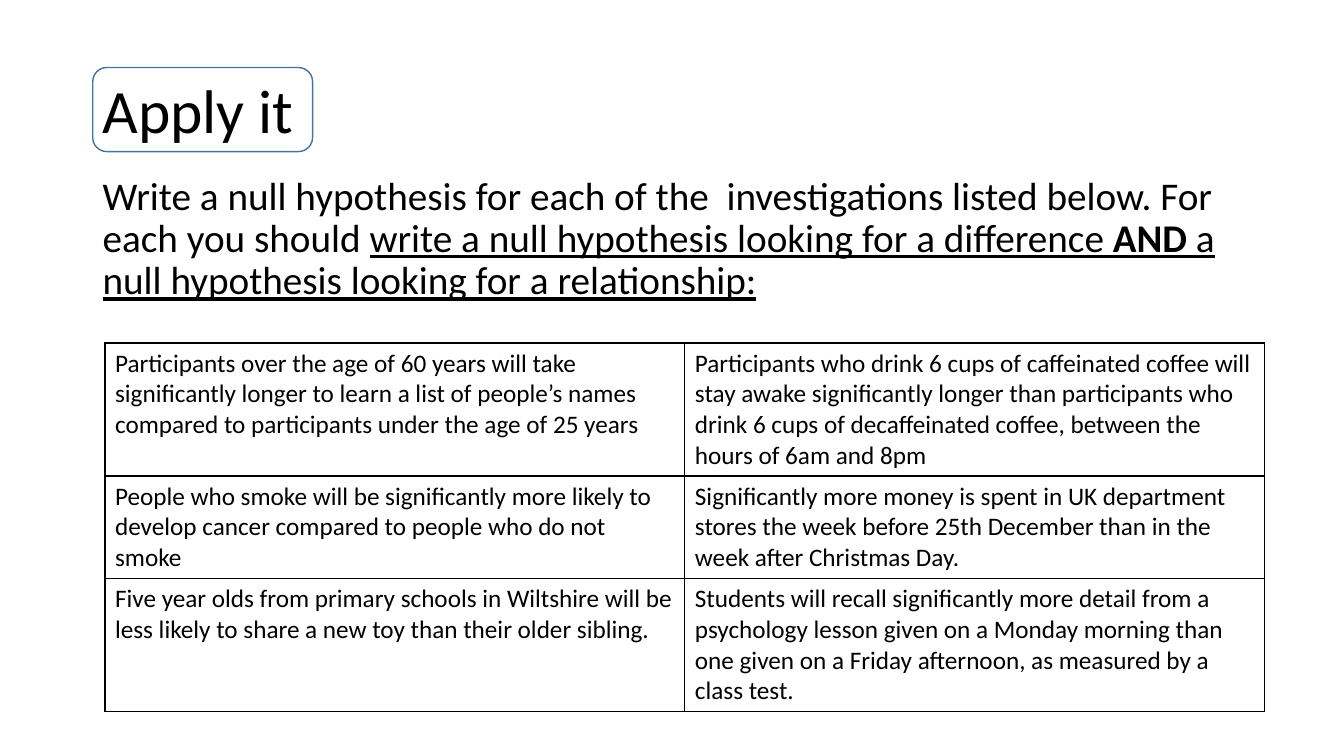
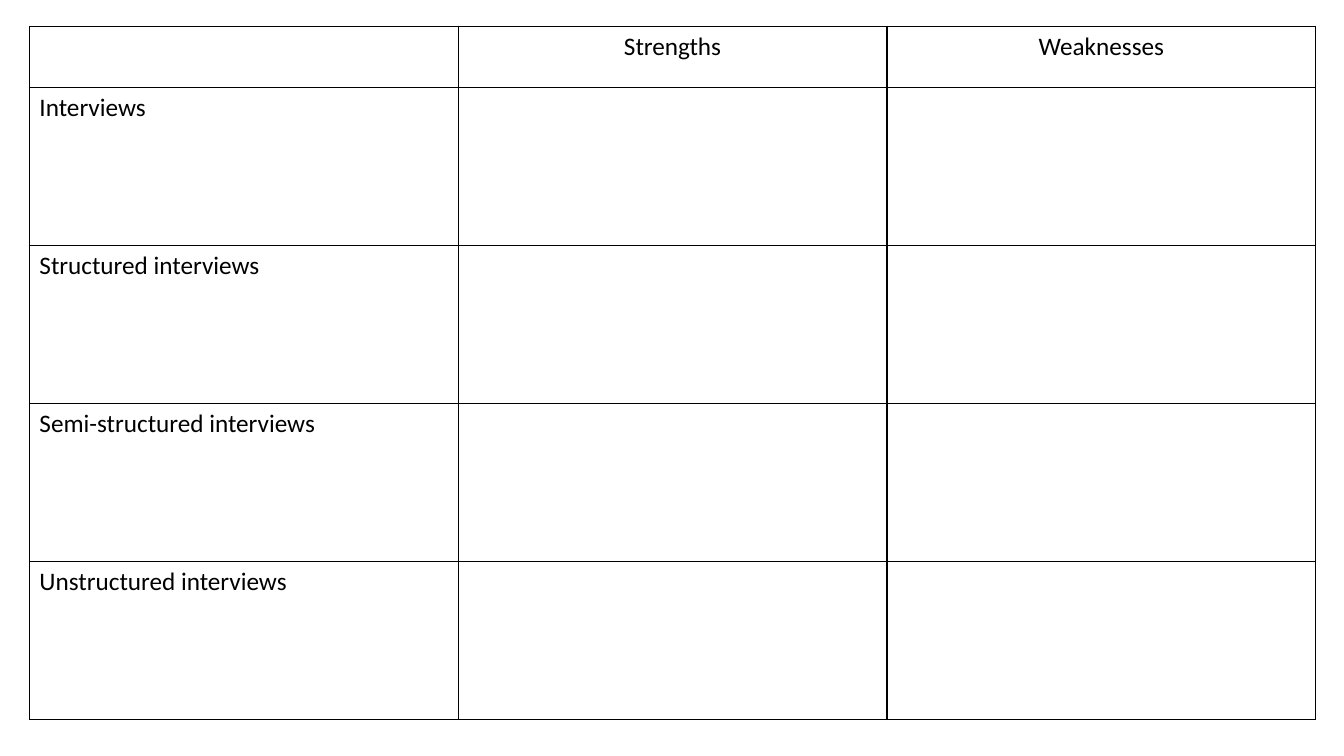
from dataclasses import dataclass

import pptx
import pptx.dml.color
import pptx.enum.shapes
import pptx.enum.text
import pptx.oxml
import pptx.oxml.ns
import pptx.presentation
import pptx.slide
import pptx.text.text
import pptx.util

Pt = pptx.util.Pt
Align = pptx.enum.text.PP_ALIGN
Anchor = pptx.enum.text.MSO_ANCHOR

# Shared style
BLACK = pptx.dml.color.RGBColor(0x00, 0x00, 0x00)
FRAME_BLUE = pptx.dml.color.RGBColor(0x43, 0x73, 0x9E)
FONT = "Calibri"
TITLE_SIZE, BODY_SIZE, CELL_SIZE = 44, 28, 18
SLIDE_WIDTH, SLIDE_HEIGHT = 960, 540
BORDER_WIDTH = 1


@dataclass(frozen=True)
class Box:
    """A place on the slide, in points."""
    left: float
    top: float
    width: float
    height: float

    def lengths(self) -> tuple:
        return Pt(self.left), Pt(self.top), Pt(self.width), Pt(self.height)


@dataclass(frozen=True)
class Span:
    """A stretch of text with one format."""
    text: str
    bold: bool = False
    underline: bool = False


@dataclass(frozen=True)
class Grid:
    """A bordered table with columns of equal width."""
    left: float
    top: float
    column_width: float
    row_heights: tuple[float, ...]
    rows: tuple[tuple[str, ...], ...]
    centred_header: bool = False


# Content
TITLE_FRAME = Box(66.24, 48.24, 157, 60)
TITLE_BOX = Box(66.24, 28.8, 828, 104.4)
TASK_BOX = Box(66.24, 122.4, 837.4, 364.3)

TASK = (
    Span("Write a null hypothesis for each of the  investigations listed below. "
         "For each you should "),
    Span("write a null hypothesis looking for a difference ", underline=True),
    Span("AND", bold=True, underline=True),
    Span(" a null hypothesis looking for a relationship:", underline=True),
)

INVESTIGATIONS = Grid(
    left=75, top=245, column_width=414.2, row_heights=(95, 73.2, 95),
    rows=(
        ("Participants over the age of 60 years will take significantly longer to learn "
         "a list of people’s names compared to participants under the age of 25 years",
         "Participants who drink 6 cups of caffeinated coffee will stay awake "
         "significantly longer than participants who drink 6 cups of decaffeinated "
         "coffee, between the hours of 6am and 8pm"),
        ("People who smoke will be significantly more likely to develop cancer compared "
         "to people who do not smoke",
         "Significantly more money is spent in UK department stores the week before "
         "25th December than in the week after Christmas Day."),
        ("Five year olds from primary schools in Wiltshire will be less likely to share "
         "a new toy than their older sibling.",
         "Students will recall significantly more detail from a psychology lesson given "
         "on a Monday morning than one given on a Friday afternoon, as measured by a "
         "class test."),
    ),
)

INTERVIEW_TYPES = ("Interviews", "Structured interviews",
                   "Semi-structured interviews", "Unstructured interviews")
EVALUATION = Grid(
    left=21, top=18.8, column_width=306.3,
    row_heights=(43.8,) + (112.9,) * len(INTERVIEW_TYPES),
    rows=(("", "Strengths", "Weaknesses"),
          *((interview, "", "") for interview in INTERVIEW_TYPES)),
    centred_header=True,
)


# Drawing functions
def write_text(frame: pptx.text.text.TextFrame, spans: tuple[Span, ...], *, size: float,
               align: Align = Align.LEFT, line_spacing: float = 1.0,
               space_before: float = 0) -> None:
    """Fill the first paragraph of a text frame with formatted spans."""
    paragraph = frame.paragraphs[0]
    paragraph.alignment = align
    paragraph.line_spacing = line_spacing
    paragraph.space_before = Pt(space_before)
    for span in spans:
        run = paragraph.add_run()
        run.text = span.text
        run.font.name = FONT
        run.font.size = Pt(size)
        run.font.color.rgb = BLACK
        run.font.bold = span.bold
        run.font.underline = span.underline


def add_text_box(slide: pptx.slide.Slide, box: Box, spans: tuple[Span, ...], *,
                 size: float, anchor: Anchor = Anchor.TOP,
                 space_before: float = 0) -> None:
    frame = slide.shapes.add_textbox(*box.lengths()).text_frame
    frame.word_wrap = True
    frame.vertical_anchor = anchor
    write_text(frame, spans, size=size, line_spacing=0.9, space_before=space_before)


def add_title_frame(slide: pptx.slide.Slide, box: Box) -> None:
    outline = slide.shapes.add_shape(
        pptx.enum.shapes.MSO_SHAPE.ROUNDED_RECTANGLE, *box.lengths())
    outline.shadow.inherit = False
    outline.fill.background()
    outline.line.color.rgb = FRAME_BLUE
    outline.line.width = Pt(BORDER_WIDTH)


def add_borders(cell) -> None:
    """Draw a line on all four sides of a table cell."""
    properties = cell._tc.get_or_add_tcPr()
    for side in ("lnL", "lnR", "lnT", "lnB"):
        properties.append(pptx.oxml.parse_xml(
            f'<a:{side} {pptx.oxml.ns.nsdecls("a")} w="{Pt(BORDER_WIDTH)}">'
            f'<a:solidFill><a:srgbClr val="{BLACK}"/></a:solidFill></a:{side}>'))


def add_grid(slide: pptx.slide.Slide, grid: Grid) -> None:
    column_count = len(grid.rows[0])
    box = Box(grid.left, grid.top, grid.column_width * column_count,
              sum(grid.row_heights))
    table = slide.shapes.add_table(
        len(grid.rows), column_count, *box.lengths()).table
    table.first_row = table.horz_banding = False
    for column in table.columns:
        column.width = Pt(grid.column_width)
    for row_index, (height, texts) in enumerate(zip(grid.row_heights, grid.rows)):
        table.rows[row_index].height = Pt(height)
        centred = grid.centred_header and row_index == 0
        for column_index, text in enumerate(texts):
            cell = table.cell(row_index, column_index)
            add_borders(cell)
            cell.fill.background()
            if text:
                write_text(cell.text_frame, (Span(text),), size=CELL_SIZE,
                           align=Align.CENTER if centred else Align.LEFT)


# Slides
def add_blank_slide(deck: pptx.presentation.Presentation) -> pptx.slide.Slide:
    return deck.slides.add_slide(deck.slide_layouts[6])


def build_hypothesis_slide(deck: pptx.presentation.Presentation) -> None:
    slide = add_blank_slide(deck)
    add_title_frame(slide, TITLE_FRAME)
    add_text_box(slide, TITLE_BOX, (Span("Apply it"),), size=TITLE_SIZE,
                 anchor=Anchor.MIDDLE)
    add_text_box(slide, TASK_BOX, TASK, size=BODY_SIZE, space_before=10)
    add_grid(slide, INVESTIGATIONS)


def build_interview_slide(deck: pptx.presentation.Presentation) -> None:
    add_grid(add_blank_slide(deck), EVALUATION)


def main() -> None:
    deck = pptx.Presentation()
    deck.slide_width, deck.slide_height = Pt(SLIDE_WIDTH), Pt(SLIDE_HEIGHT)
    build_hypothesis_slide(deck)
    build_interview_slide(deck)
    deck.save("out.pptx")


if __name__ == "__main__":
    main()
